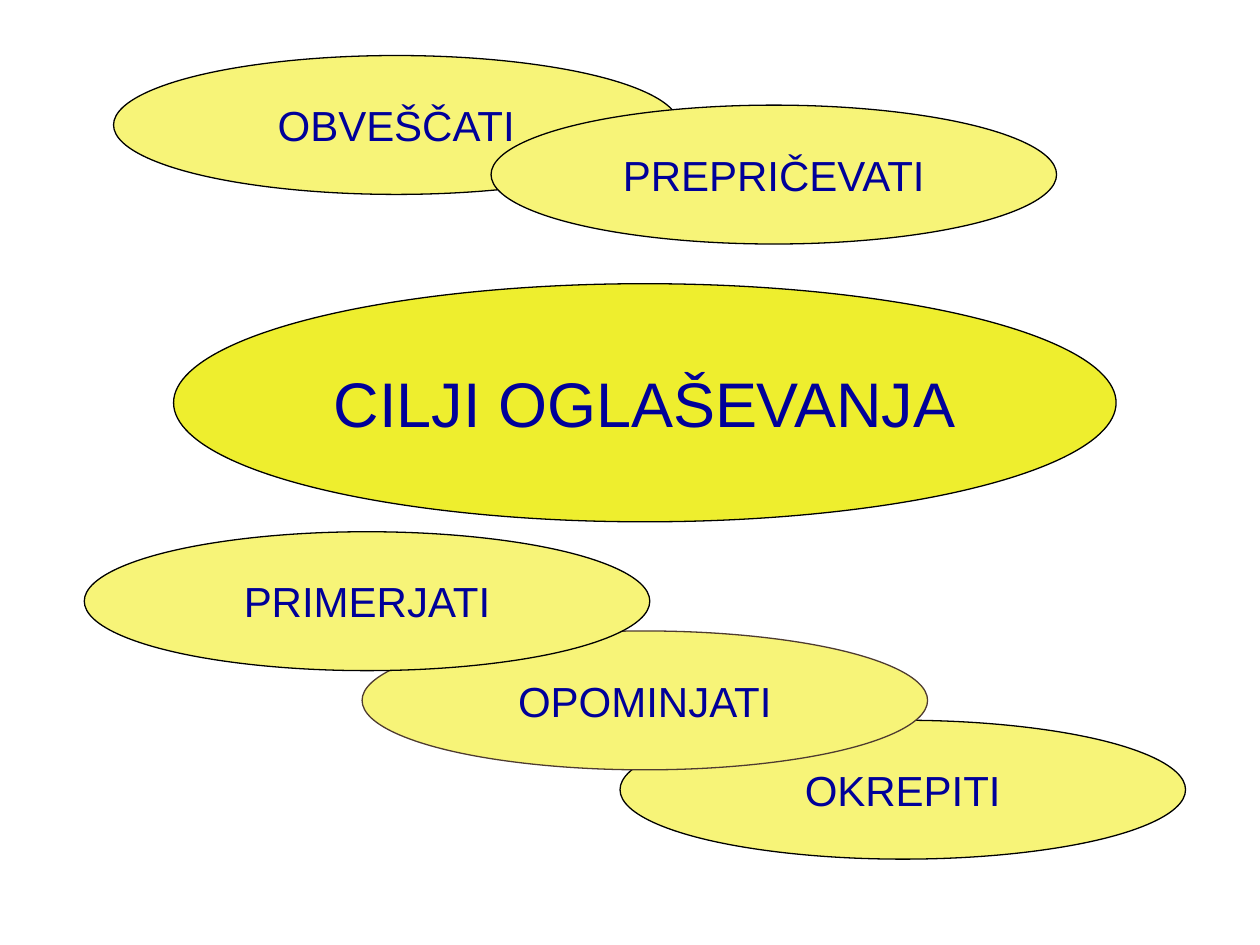
from pptx import Presentation
from pptx.dml.color import RGBColor
from pptx.enum.shapes import MSO_SHAPE
from pptx.enum.text import MSO_ANCHOR, PP_ALIGN
from pptx.util import Cm, Pt

ELLIPSE = MSO_SHAPE.OVAL
MIDDLE = MSO_ANCHOR.MIDDLE
CENTER = PP_ALIGN.CENTER

YELLOW = RGBColor(0xEE, 0xEE, 0x2E)
PALE_YELLOW = RGBColor(0xF7, 0xF4, 0x78)
NAVY = RGBColor(0x00, 0x00, 0x99)
BLACK = RGBColor(0x00, 0x00, 0x00)
BROWN = RGBColor(0x4E, 0x3B, 0x30)

TOPIC_SIZE = (19.0, 4.8)
GOAL_SIZE = (11.4, 2.8)

# Text, left and top in cm, outline; from back to front
GOALS = [
    ("OBVEŠČATI", 2.29, 1.12, BLACK),
    ("PREPRIČEVATI", 9.9, 2.12, BLACK),
    ("OKREPITI", 12.5, 14.52, BLACK),
    ("OPOMINJATI", 7.3, 12.72, BROWN),
    ("PRIMERJATI", 1.7, 10.72, BLACK),
]


def add_ellipse(slide, text, left, top, size, fill, outline, font_size):
    width, height = size
    sp = slide.shapes.add_shape(ELLIPSE, Cm(left), Cm(top), Cm(width), Cm(height))
    sp.shadow.inherit = False
    sp.fill.solid()
    sp.fill.fore_color.rgb = fill
    sp.line.color.rgb = outline
    sp.line.width = Pt(0.75)

    tf = sp.text_frame
    tf.word_wrap = False
    tf.vertical_anchor = MIDDLE
    p = tf.paragraphs[0]
    p.alignment = CENTER
    r = p.add_run()
    r.text = text
    r.font.name = "Arial"
    r.font.size = Pt(font_size)
    r.font.color.rgb = NAVY


def main():
    prs = Presentation()
    prs.slide_width = Cm(25.4)
    prs.slide_height = Cm(19.05)
    slide = prs.slides.add_slide(prs.slide_layouts[6])

    add_ellipse(slide, "CILJI OGLAŠEVANJA", 3.5, 5.72, TOPIC_SIZE, YELLOW, BLACK, 36)
    for text, left, top, outline in GOALS:
        add_ellipse(slide, text, left, top, GOAL_SIZE, PALE_YELLOW, outline, 24)

    prs.save("out.pptx")


if __name__ == "__main__":
    main()
